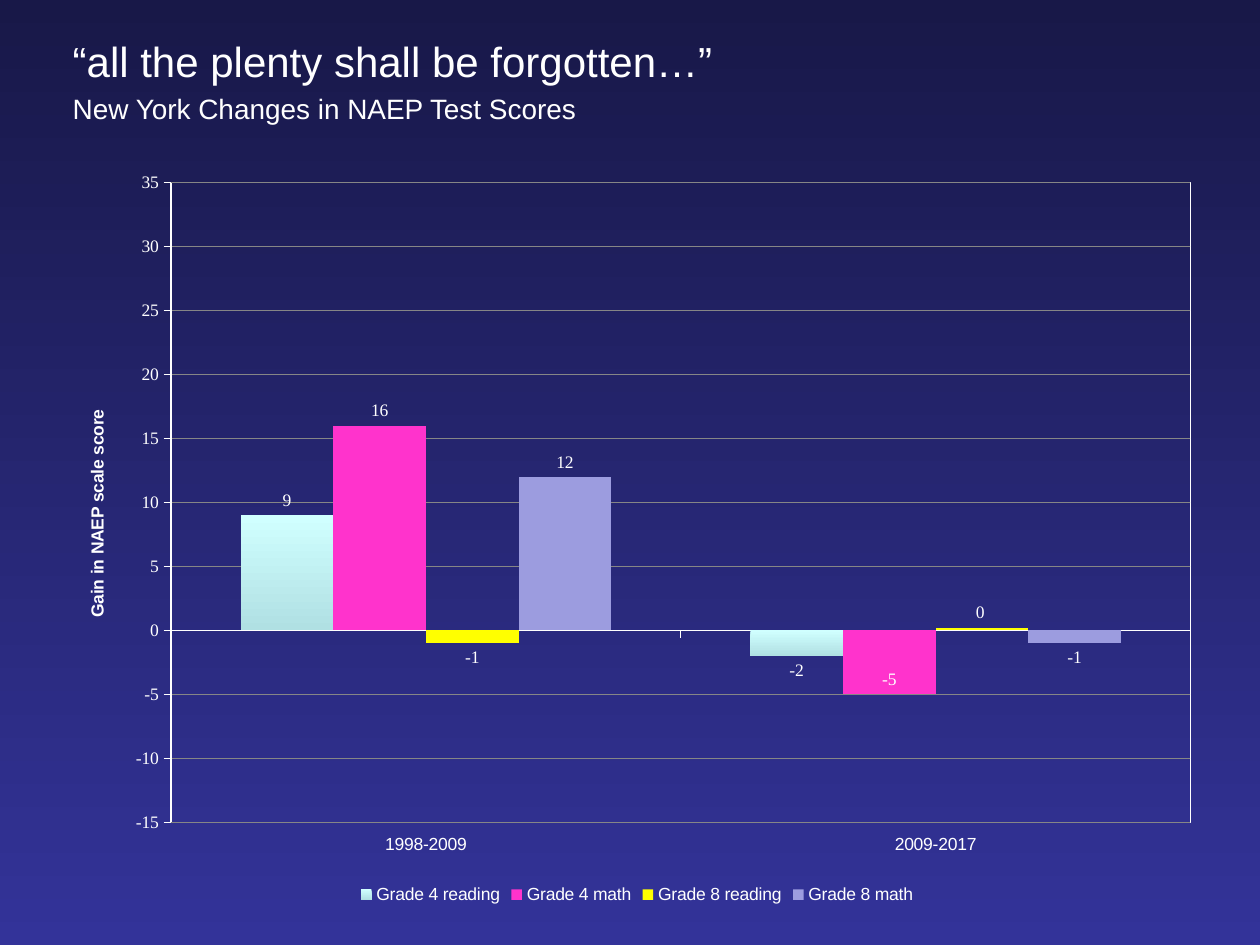
from lxml import etree
from pptx import Presentation
from pptx.chart.data import CategoryChartData
from pptx.dml.color import RGBColor
from pptx.enum.chart import XL_CHART_TYPE, XL_LABEL_POSITION, XL_LEGEND_POSITION, XL_TICK_LABEL_POSITION, XL_TICK_MARK
from pptx.enum.text import MSO_AUTO_SIZE, PP_ALIGN
from pptx.oxml import parse_xml
from pptx.oxml.ns import qn
from pptx.util import Pt

COLUMNS = XL_CHART_TYPE.COLUMN_CLUSTERED
OUTSIDE, INSIDE = XL_LABEL_POSITION.OUTSIDE_END, XL_LABEL_POSITION.INSIDE_END
BOTTOM = XL_LEGEND_POSITION.BOTTOM
LOW = XL_TICK_LABEL_POSITION.LOW
TICK_OUT = XL_TICK_MARK.OUTSIDE
LEFT, CENTER = PP_ALIGN.LEFT, PP_ALIGN.CENTER
FIT = MSO_AUTO_SIZE.SHAPE_TO_FIT_TEXT
SANS, SERIF, WHITE = "Arial", "Times New Roman", "FFFFFF"


def color(value):
    return RGBColor.from_string(value)


def style(font, name, size, bold=False):
    font.name, font.size, font.bold = name, Pt(size), bold
    font.color.rgb = color(WHITE)


prs = Presentation()
prs.slide_width, prs.slide_height = Pt(720), Pt(540)
s = prs.slides.add_slide(prs.slide_layouts[6])

# Background, dark at the top
fill = s.background.fill
fill.gradient()
fill.gradient_angle = 270
for stop, value, position in zip(fill.gradient_stops, ("181848", "333399"), (0, 1)):
    stop.color.rgb = color(value)
    stop.position = position

# Chart data
data = CategoryChartData()
data.categories = ["1998-2009", "2009-2017"]
series = [
    ("Grade 4 reading", (9, -2), "BBE0E3"),
    ("Grade 4 math", (16, -5), "FF33CC"),
    ("Grade 8 reading", (-1, 0.15), "FFFF00"),
    ("Grade 8 math", (12, -1), "9C9CDF"),
]
for name, values, _ in series:
    data.add_series(name, values)
chart = s.shapes.add_chart(COLUMNS, Pt(34.5), Pt(90.75), Pt(659), Pt(429), data).chart
chart.has_title = False
style(chart.font, SERIF, 10)
chart.has_legend = True
chart.legend.position = BOTTOM
chart.legend.include_in_layout = False
style(chart.legend.font, SANS, 10)

# Axes
cat, val = chart.category_axis, chart.value_axis
for axis in (cat, val):
    axis.major_tick_mark = TICK_OUT
    axis.format.line.color.rgb = color(WHITE)
    axis.format.line.width = Pt(0.75)
cat.tick_label_position = LOW
style(cat.tick_labels.font, SANS, 10)
style(val.tick_labels.font, SERIF, 10)
val.minimum_scale, val.maximum_scale, val.major_unit = -15, 35, 5
val.major_gridlines.format.line.color.rgb = color("868686")
val.major_gridlines.format.line.width = Pt(0.75)
r = val.axis_title.text_frame.paragraphs[0].add_run()
r.text = "Gain in NAEP scale score"
style(r.font, SANS, 10, True)

# Series fills and labels
plot = chart.plots[0]
plot.gap_width, plot.overlap, plot.vary_by_categories = 150, 0, False
for ser, (_, _, value) in zip(plot.series, series):
    ser.invert_if_negative = False
    ser.format.fill.solid()
    ser.format.fill.fore_color.rgb = color(value)
    labels = ser.data_labels
    labels.show_value = True
    labels.number_format, labels.number_format_is_linked = "General", False
    labels.position = OUTSIDE
    style(labels.font, SERIF, 10)

reading4, math4, reading8, _ = plot.series
fill = reading4.format.fill
fill.gradient()
fill.gradient_angle = 270
for stop, value, position in zip(fill.gradient_stops, ("D0FFFF", "B0E0E3"), (0, 1)):
    stop.color.rgb = color(value)
    stop.position = position
label = math4.points[1].data_label
label.position = INSIDE
style(label.font, SERIF, 10)

# The near-zero column carries a text box in place of its label
reading8.points[1].data_label.position = OUTSIDE
label = reading8.data_labels._element.find(qn("c:dLbl"))
for child in list(label)[1:]:
    label.remove(child)
etree.SubElement(label, qn("c:delete")).set("val", "1")

# Plot area: fixed inner layout and white frame
NS = ('xmlns:c="http://schemas.openxmlformats.org/drawingml/2006/chart" '
      'xmlns:a="http://schemas.openxmlformats.org/drawingml/2006/main"')
area = chart._chartSpace.chart.plotArea
for old in area.findall(qn("c:layout")):
    area.remove(old)
places = "".join(f'<c:{tag} val="{v}"/>' for tag, v in (
    ("xMode", "edge"), ("yMode", "edge"), ("x", 0.096), ("y", 0.032), ("w", 0.884), ("h", 0.852)))
area.insert(0, parse_xml(
    f'<c:layout {NS}><c:manualLayout><c:layoutTarget val="inner"/>{places}</c:manualLayout></c:layout>'))
area.append(parse_xml(
    f'<c:spPr {NS}><a:noFill/><a:ln w="9525"><a:solidFill><a:srgbClr val="{WHITE}"/>'
    '</a:solidFill></a:ln></c:spPr>'))

# Title, subtitle and the label of the near-zero column
texts = [
    ("“all the plenty shall be forgotten…”", 34.5, 16.5, 390, 36, SANS, 24, LEFT, False),
    ("New York Changes in NAEP Test Scores", 34.5, 49, 659, 26.5, SANS, 16, LEFT, True),
    ("0", 550.5, 340, 18, 18, SERIF, 10, CENTER, False),
]
for text, x, y, w, h, font, size, align, wrap in texts:
    tf = s.shapes.add_textbox(Pt(x), Pt(y), Pt(w), Pt(h)).text_frame
    tf.word_wrap = wrap
    tf.auto_size = FIT
    p = tf.paragraphs[0]
    p.alignment = align
    r = p.add_run()
    r.text = text
    style(r.font, font, size)

prs.save("out.pptx")
